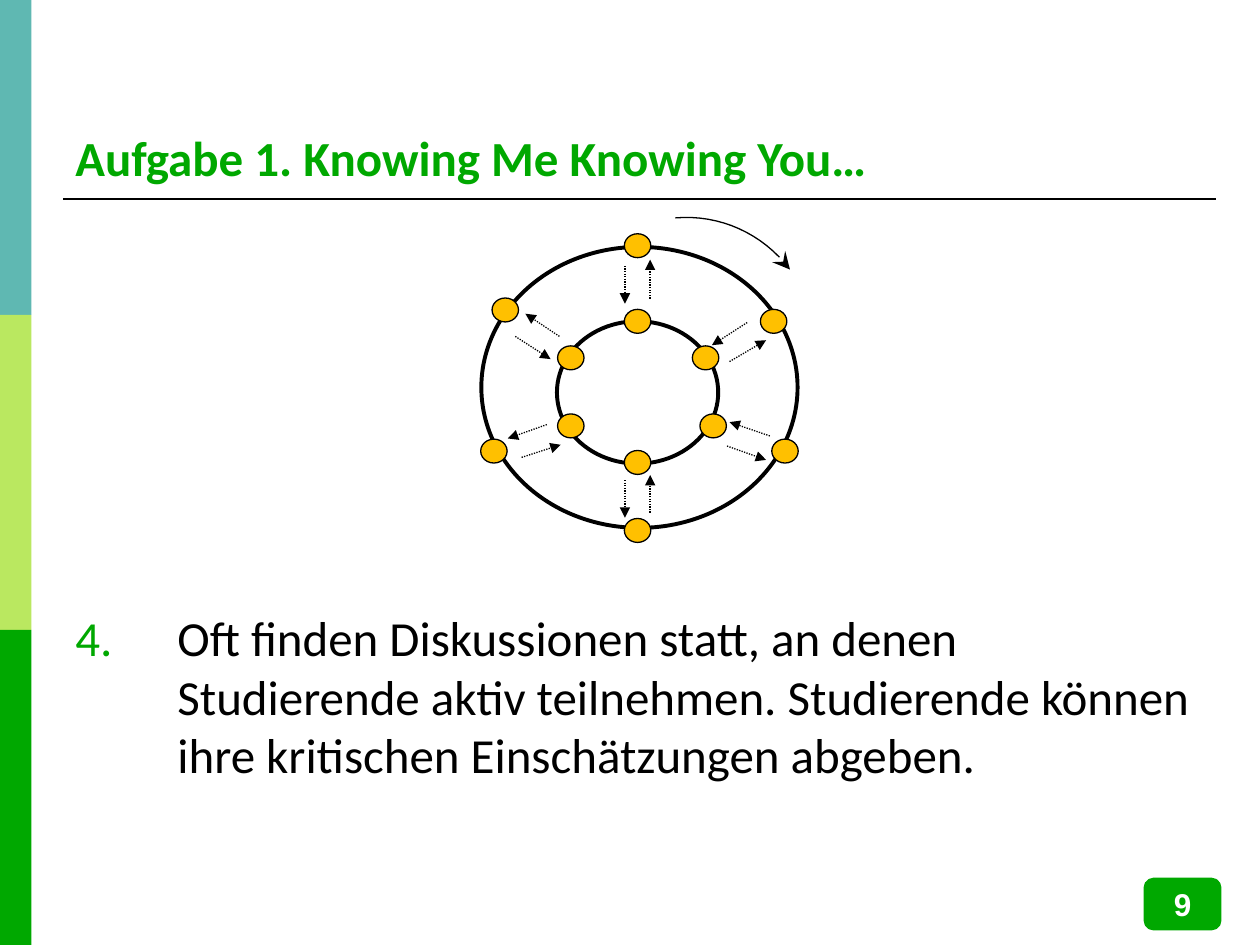
from pptx import Presentation
from pptx.dml.color import RGBColor
from pptx.enum.dml import MSO_LINE
from pptx.enum.shapes import MSO_CONNECTOR, MSO_SHAPE as Shape
from pptx.enum.text import MSO_ANCHOR as Anchor, PP_ALIGN as Align
from pptx.oxml.ns import qn
from pptx.util import Inches, Pt
from lxml.etree import SubElement

COLORS = {"teal": "5FB8B2", "lime": "BAE860", "green": "00A800",
          "amber": "FFC000", "black": "000000", "white": "FFFFFF"}
COLUMNS, ROWS = 100, 75


def rgb(name):
    return RGBColor.from_string(COLORS[name])


class Deck:
    """Holds the style and the current slide; lengths are grid columns and rows."""

    def __init__(self, width=10, height=7.5):
        self.prs = Presentation()
        self.prs.slide_width, self.prs.slide_height = Inches(width), Inches(height)
        self.slide = self.prs.slides.add_slide(self.prs.slide_layouts[6])
        self.shapes = self.slide.shapes

    def x(self, columns):
        return round(self.prs.slide_width * columns / COLUMNS)

    def y(self, rows):
        return round(self.prs.slide_height * rows / ROWS)

    def box(self, left, top, width, height):
        return self.x(left), self.y(top), self.x(width), self.y(height)

    def shape(self, kind, area, fill, line=None, weight=0.75):
        shape = self.shapes.add_shape(kind, *self.box(*area))
        shape.shadow.inherit = False
        shape.fill.solid()
        shape.fill.fore_color.rgb = rgb(fill)
        if line:
            shape.line.color.rgb = rgb(line)
            shape.line.width = Pt(weight)
        else:
            shape.line.fill.background()
        return shape

    def dot(self, center_x, center_y, width=2.1, height=1.9):
        area = (center_x - width / 2, center_y - height / 2, width, height)
        self.shape(Shape.FLOWCHART_CONNECTOR, area, "amber", "black")

    def stroke(self, line, weight, head=None, size="med"):
        line.color.rgb = rgb("black")
        line.width = Pt(weight)
        if head:
            SubElement(line._get_or_add_ln(), qn("a:tailEnd"),
                       type=head, w=size, len=size)

    def line(self, start, end, weight=0.75, dash=None, head=None):
        line = self.shapes.add_connector(
            MSO_CONNECTOR.STRAIGHT, self.x(start[0]), self.y(start[1]),
            self.x(end[0]), self.y(end[1]))
        if dash:
            line.line.dash_style = dash
        self.stroke(line.line, weight, head)
        SubElement(line._element.spPr, qn("a:effectLst"))

    def curve(self, controls, steps=16):
        """Draw a cubic Bézier curve with an arrowhead at its end."""
        points = []
        for step in range(steps + 1):
            t = step / steps
            weights = ((1 - t) ** 3, 3 * t * (1 - t) ** 2, 3 * t ** 2 * (1 - t), t ** 3)
            col, row = (sum(w * c[axis] for w, c in zip(weights, controls))
                        for axis in (0, 1))
            points.append((self.x(col), self.y(row)))
        builder = self.shapes.build_freeform(*points[0])
        builder.add_line_segments(points[1:], close=False)
        arc = builder.convert_to_shape()
        arc.shadow.inherit = False
        arc.fill.background()
        self.stroke(arc.line, 0.75, "stealth", "lg")

    def text_box(self, area):
        return self.shapes.add_textbox(*self.box(*area))

    def text(self, shape, words, color, anchor=Anchor.TOP, align=Align.LEFT, **font):
        frame = shape.text_frame
        frame.word_wrap = True
        frame.vertical_anchor = anchor
        paragraph = frame.paragraphs[0]
        paragraph.alignment = align
        run = paragraph.add_run()
        run.text = words
        run.font.color.rgb = rgb(color)
        for key, value in {"name": "Calibri", "size": Pt(28), **font}.items():
            setattr(run.font, key, value)
        return paragraph

    def number(self, paragraph, start, color, indent):
        props = paragraph._p.get_or_add_pPr()
        props.set("marL", str(self.x(indent)))
        props.set("indent", str(-self.x(indent)))
        SubElement(SubElement(props, qn("a:buClr")), qn("a:srgbClr"), val=COLORS[color])
        SubElement(props, qn("a:buAutoNum"), type="arabicPeriod", startAt=str(start))


def main():
    deck = Deck()

    # Side band and title rule
    band_height = ROWS / 3
    for index, color in enumerate(("teal", "lime", "green")):
        deck.shape(Shape.RECTANGLE, (0, index * band_height, 2.5, band_height), color)
    deck.line((5, 15.8), (96.5, 15.8), weight=1.5)

    # Title and numbered task
    deck.text(deck.text_box((5, 2.8, 91.5, 12.5)), "Aufgabe 1. Knowing Me Knowing You…",
              "green", Anchor.BOTTOM, bold=True)
    task = deck.text(
        deck.text_box((5, 47.7, 91.5, 19.3)),
        "Oft finden Diskussionen statt, an denen Studierende aktiv teilnehmen. "
        "Studierende können ihre kritischen Einschätzungen abgeben.", "black")
    deck.number(task, 4, "green", indent=8.1)

    # Outer and inner circle
    for ring in ((38.2, 19.6, 25.1, 22.3), (44.2, 25.5, 12.8, 11.3)):
        deck.shape(Shape.OVAL, ring, "white", "black", 2.25)

    # People on the circles
    outer_people = [(50.6, 19.5), (40.1, 24.6), (39.2, 35.8),
                    (50.6, 42.1), (61.4, 25.5), (62.3, 35.8)]
    inner_people = [(50.6, 25.5), (45.3, 28.4), (45.3, 33.8),
                    (50.6, 36.7), (56, 28.4), (56.6, 33.8)]
    for person in outer_people + inner_people:
        deck.dot(*person)

    # Talk in both directions between each pair
    talks = [((49.6, 21.1), (49.6, 24.1)), ((51.6, 23.7), (51.6, 20.6)),
             ((49.6, 38.1), (49.6, 41.1)), ((51.6, 40.7), (51.6, 37.7)),
             ((44.4, 26.7), (41.7, 24.9)), ((40.9, 26.7), (43.7, 28.5)),
             ((43.4, 33.7), (40.3, 34.8)), ((41.4, 36.3), (44.5, 35.3)),
             ((59.3, 25.6), (56.5, 27.4)), ((57.9, 28.7), (60.8, 27)),
             ((61.1, 34.6), (57.9, 33.5)), ((57.7, 35.4), (60.8, 36.5))]
    for start, end in talks:
        deck.line(start, end, dash=MSO_LINE.ROUND_DOT, head="triangle")

    # Turning direction of the outer circle
    deck.curve([(53.6, 17.3), (57.1, 17), (60.5, 18.5), (62.7, 21.4)])

    # Page number
    badge = deck.shape(Shape.ROUNDED_RECTANGLE, (90.9, 69.8, 5.9, 3.9),
                       "green", "green", 2)
    deck.text(badge, "9", "white", Anchor.MIDDLE, Align.CENTER,
              name="Arial", size=Pt(18), bold=True)

    deck.prs.save("out.pptx")


if __name__ == "__main__":
    main()
